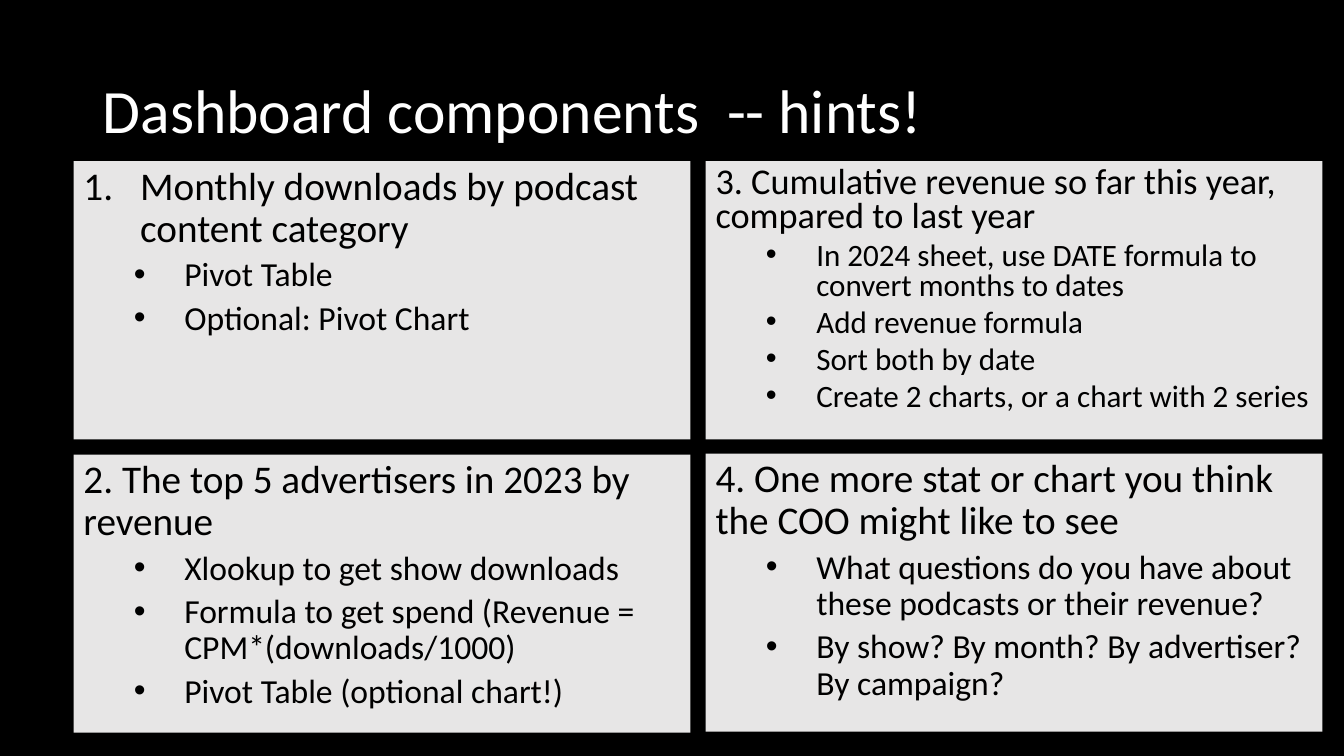
from pptx import Presentation
from pptx.dml.color import RGBColor
from pptx.enum.shapes import MSO_SHAPE as Preset
from pptx.enum.text import MSO_ANCHOR as Anchor, PP_ALIGN as Align
from pptx.oxml.ns import qn
from pptx.util import Pt
from lxml.etree import SubElement

BLACK = RGBColor(0x00, 0x00, 0x00)
WHITE = RGBColor(0xFF, 0xFF, 0xFF)
PALE_GREY = RGBColor(0xE7, 0xE6, 0xE6)
FONT = "Calibri"

LEFT, RIGHT = 52.56, 504
TOP = 115.2
PANEL_WIDTH, PANEL_HEIGHT = 440.64, 198.72

# Left, top, heading size, hint size, line spacing, heading, hints
PANELS = [
    (LEFT, TOP, 28, 24, 0.9,
     "Monthly downloads by podcast content category",
     ["Pivot Table", "Optional: Pivot Chart"]),
    (LEFT, 324.72, 28, 24, 0.9,
     "2. The top 5 advertisers in 2023 by  revenue",
     ["Xlookup to get show downloads",
      "Formula to get spend (Revenue = CPM*(downloads/1000)",
      "Pivot Table (optional chart!)"]),
    (RIGHT, TOP, 25.9, 22.2, 0.8,
     "3. Cumulative revenue so far this year, compared to last year",
     ["In 2024 sheet, use DATE formula to convert months to dates",
      "Add revenue formula",
      "Sort both by date",
      "Create 2 charts, or a chart with 2 series"]),
    (RIGHT, 324, 28, 24, 0.9,
     "4. One more stat or chart you think the COO might like to see",
     ["What questions do you have about these podcasts or their revenue?",
      "By show? By month? By advertiser? By campaign?"]),
]


def apply_format(target, values):
    for name, value in values.items():
        setattr(target, name, value)


def write_line(paragraph, text, size, color, spacing, before=0, level=0):
    apply_format(paragraph, {
        "alignment": Align.LEFT, "line_spacing": spacing,
        "space_before": Pt(before), "level": level})
    run = paragraph.add_run()
    run.text = text
    apply_format(run.font, {"name": FONT, "size": Pt(size)})
    run.font.color.rgb = color


def add_marker(paragraph, margin, hang, tag, **attributes):
    """Give a paragraph a hanging indent with a bullet or number."""
    properties = paragraph._p.get_or_add_pPr()
    properties.set("marL", str(Pt(margin)))
    properties.set("indent", str(-Pt(hang)))
    SubElement(properties, qn("a:buFont"), typeface="Arial" if tag == "a:buChar" else FONT)
    SubElement(properties, qn(tag), **attributes)


def add_title(slide, text):
    title = slide.shapes.add_textbox(Pt(66.24), Pt(28.8), Pt(828), Pt(104.4))
    frame = title.text_frame
    apply_format(frame, {"word_wrap": True, "vertical_anchor": Anchor.MIDDLE})
    write_line(frame.paragraphs[0], text, 44, WHITE, 0.9)


def add_panel(slide, left, top, heading_size, hint_size, spacing, heading, hints):
    panel = slide.shapes.add_shape(
        Preset.RECTANGLE, Pt(left), Pt(top), Pt(PANEL_WIDTH), Pt(PANEL_HEIGHT))
    panel.shadow.inherit = False
    panel.fill.solid()
    panel.fill.fore_color.rgb = PALE_GREY
    panel.line.fill.background()
    frame = panel.text_frame
    apply_format(frame, {"word_wrap": True, "vertical_anchor": Anchor.TOP})

    write_line(frame.paragraphs[0], heading, heading_size, BLACK, spacing, before=10)
    for hint in hints:
        line = frame.add_paragraph()
        write_line(line, hint, hint_size, BLACK, spacing, before=5, level=1)
        add_marker(line, 72, 36, "a:buChar", char="•")
    return frame.paragraphs[0]


def main():
    deck = Presentation()
    apply_format(deck, {"slide_width": Pt(960), "slide_height": Pt(540)})
    slide = deck.slides.add_slide(deck.slide_layouts[6])
    slide.background.fill.solid()
    slide.background.fill.fore_color.rgb = BLACK

    # Title
    add_title(slide, "Dashboard components  -- hints!")

    # Four hint panels; the first heading is numbered automatically
    headings = [add_panel(slide, *panel) for panel in PANELS]
    add_marker(headings[0], 40.5, 40.5, "a:buAutoNum", type="arabicPeriod")

    deck.save("out.pptx")


if __name__ == "__main__":
    main()
